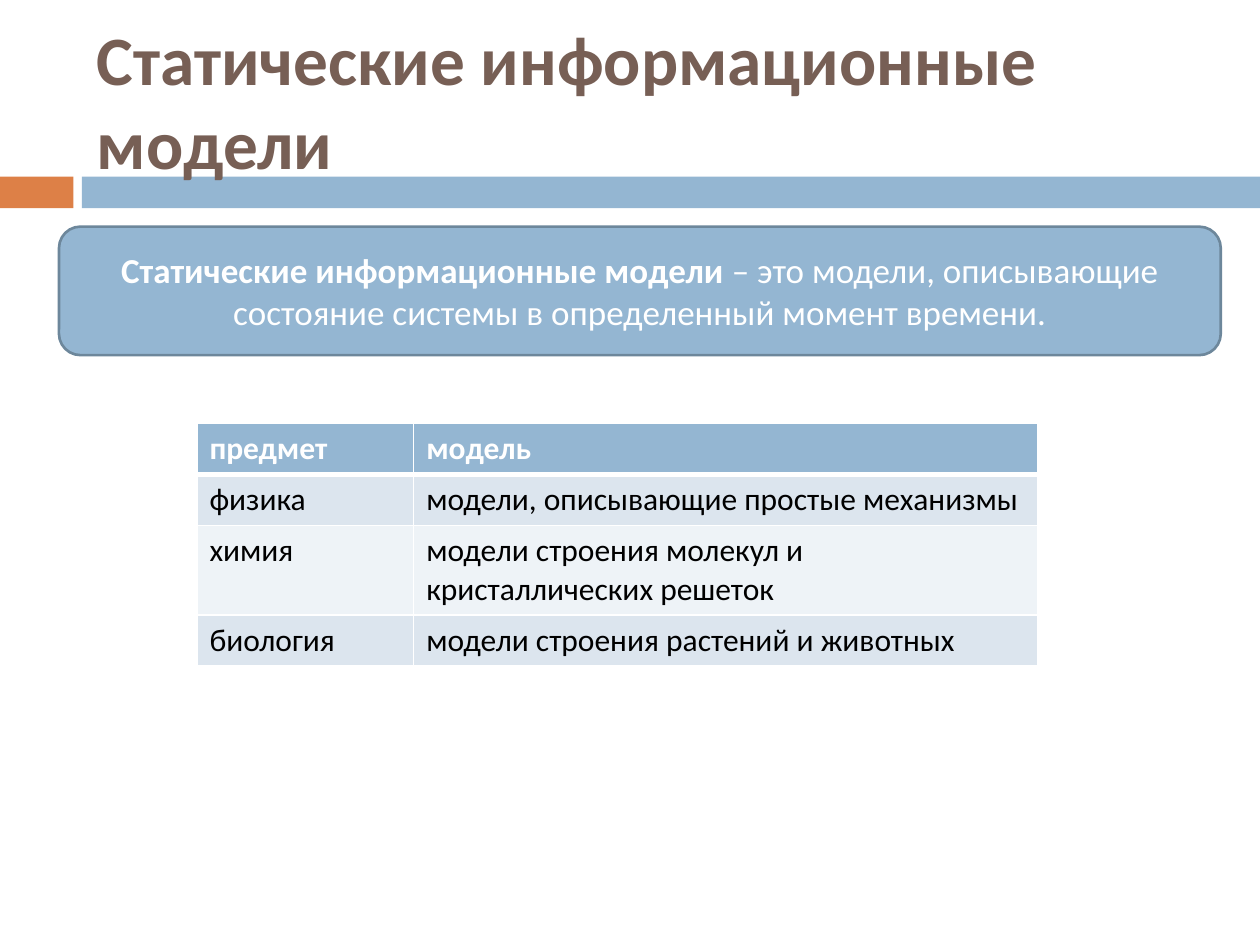
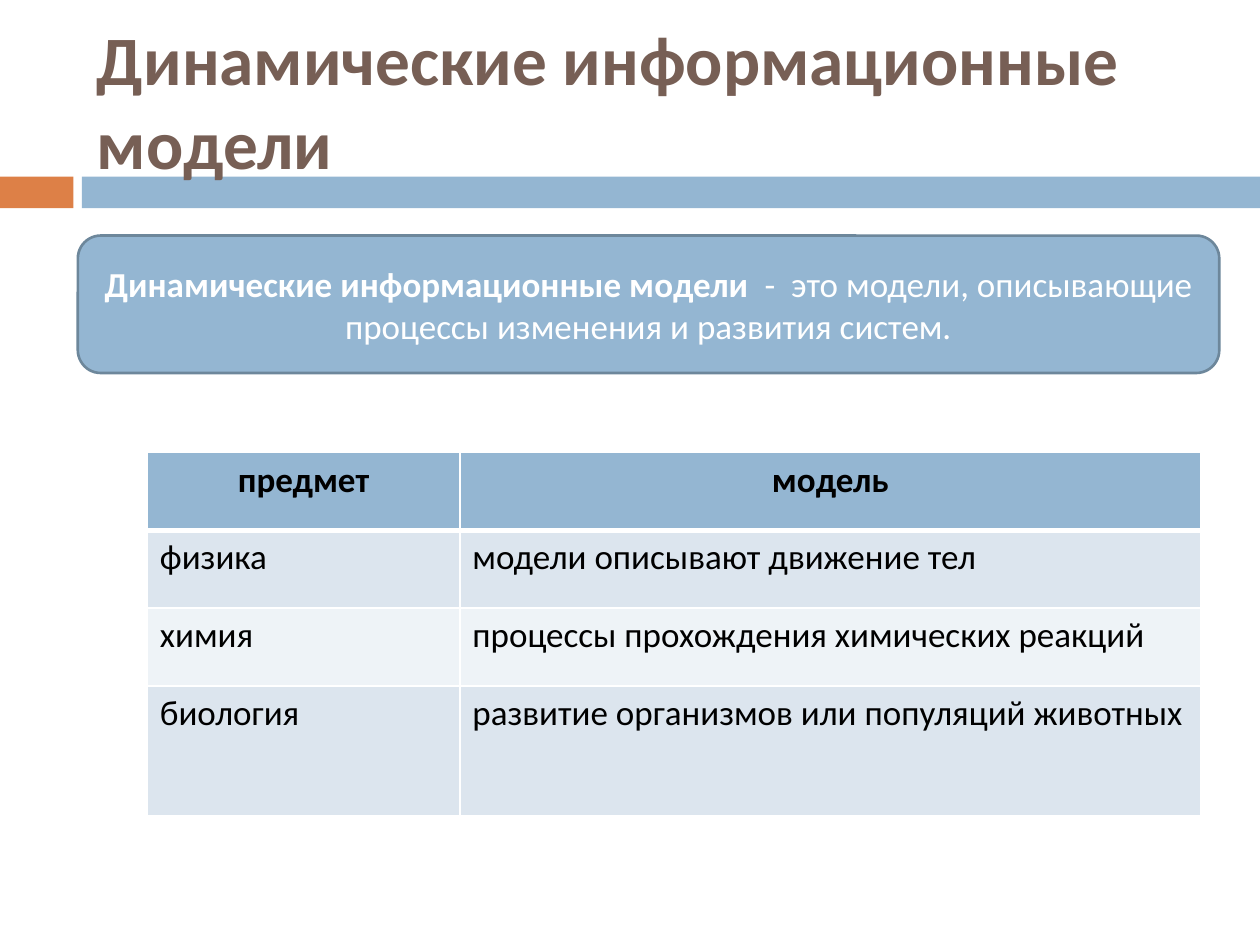
"""Two slides that define static and dynamic information models."""
import dataclasses

import lxml.etree
import pptx
import pptx.dml.color
import pptx.enum.shapes
import pptx.enum.text
import pptx.oxml.ns
import pptx.util

Cm = pptx.util.Cm
ALIGN = pptx.enum.text.PP_ALIGN
MIDDLE = pptx.enum.text.MSO_ANCHOR.MIDDLE
SHAPE = pptx.enum.shapes.MSO_SHAPE
TITLE_ONLY = 5


@dataclasses.dataclass(frozen=True)
class Theme:
    """Fonts, type sizes and colours shared by the slides."""
    font: str = "Calibri"
    title_size: float = 39.6
    definition_size: float = 20
    title: str = "775F55"
    accent: str = "DD8047"
    main: str = "94B6D2"
    outline: str = "6D879B"
    odd_row: str = "DCE5EE"
    even_row: str = "EEF3F7"
    light: str = "FFFFFF"
    dark: str = "000000"


THEME = Theme()


def rgb(colour):
    """Turn a hex string into a colour."""
    return pptx.dml.color.RGBColor.from_string(colour)


def add_run(paragraph, text, size, colour, bold=False):
    """Append one formatted run."""
    run = paragraph.add_run()
    run.text = text
    run.font.name = THEME.font
    run.font.size = pptx.util.Pt(size)
    run.font.bold = bold
    run.font.color.rgb = rgb(colour)


def add_block(slide, kind, box, fill, outline=None):
    """Add a flat filled shape, outlined on request."""
    block = slide.shapes.add_shape(kind, *map(Cm, box))
    block.shadow.inherit = False
    block.fill.solid()
    block.fill.fore_color.rgb = rgb(fill)
    if outline:
        block.line.color.rgb = rgb(outline)
        block.line.width = pptx.util.Pt(1.5)
    else:
        block.line.fill.background()
    return block


def put_bands_on_layout(layout, slide):
    """Draw the two title bands and hand them to the shared layout."""
    top, height = 3.56, 0.64
    for left, width, colour in ((0, 1.48, THEME.accent), (1.65, 23.75, THEME.main)):
        band = add_block(slide, SHAPE.RECTANGLE, (left, top, width, height), colour)
        layout.shapes.element.insert(2, band.element)


def set_title(slide, text):
    """Place and format the slide title."""
    title = slide.shapes.title
    title.left, title.top, title.width, title.height = map(Cm, (1.7, 0.64, 22.66, 2.74))
    frame = title.text_frame
    frame.auto_size = pptx.enum.text.MSO_AUTO_SIZE.NONE
    frame.vertical_anchor = MIDDLE
    paragraph = frame.paragraphs[0]
    paragraph.alignment = ALIGN.LEFT
    add_run(paragraph, text, THEME.title_size, THEME.title, bold=True)


def add_definition(slide, box, term, meaning):
    """Add the rounded panel with a bold term and its meaning."""
    panel = add_block(slide, SHAPE.ROUNDED_RECTANGLE, box, THEME.main, THEME.outline)
    frame = panel.text_frame
    frame.word_wrap = True
    frame.vertical_anchor = MIDDLE
    paragraph = frame.paragraphs[0]
    paragraph.alignment = ALIGN.CENTER
    add_run(paragraph, term, THEME.definition_size, THEME.light, bold=True)
    add_run(paragraph, meaning, THEME.definition_size, THEME.light)


def set_borders(cell, top, bottom):
    """Draw white cell borders with the given top and bottom widths in points."""
    properties = cell._tc.get_or_add_tcPr()
    qn = pptx.oxml.ns.qn
    for side, width in (("L", 1), ("R", 1), ("T", top), ("B", bottom)):
        line = lxml.etree.SubElement(properties, qn(f"a:ln{side}"), w=str(pptx.util.Pt(width)))
        fill = lxml.etree.SubElement(line, qn("a:solidFill"))
        lxml.etree.SubElement(fill, qn("a:srgbClr"), val=THEME.light)


def add_models_table(slide, corner, widths, heights, rows, size,
                     header_colour, header_align, body_align):
    """Add a table of subjects and their models under a header row."""
    frame = slide.shapes.add_table(len(rows), len(widths), *map(Cm, corner),
                                   Cm(sum(widths)), Cm(sum(heights)))
    table = frame.table
    for column, width in zip(table.columns, widths):
        column.width = Cm(width)
    for index, (row, height, texts) in enumerate(zip(table.rows, heights, rows)):
        row.height = Cm(height)
        header = index == 0
        band = THEME.odd_row if index % 2 else THEME.even_row
        for cell, text in zip(row.cells, texts):
            set_borders(cell, top=3 if index == 1 else 1, bottom=3 if header else 1)
            cell.fill.solid()
            cell.fill.fore_color.rgb = rgb(THEME.main if header else band)
            paragraph = cell.text_frame.paragraphs[0]
            paragraph.alignment = header_align if header else body_align
            add_run(paragraph, text, size, header_colour if header else THEME.dark, header)


def main():
    """Build and save the presentation."""
    presentation = pptx.Presentation()
    presentation.slide_width, presentation.slide_height = Cm(25.4), Cm(19.05)
    layout = presentation.slide_layouts[TITLE_ONLY]
    header = ("предмет", "модель")

    static = presentation.slides.add_slide(layout)
    put_bands_on_layout(layout, static)
    set_title(static, "Статические информационные модели")
    add_definition(
        static, (1.19, 4.57, 23.42, 2.59), "Статические информационные модели ",
        "– это модели, описывающие состояние системы в определенный момент времени.")
    add_models_table(
        static, (3.97, 8.53), (4.37, 12.57), [1.03] * 4,
        (header,
         ("физика", "модели, описывающие простые механизмы"),
         ("химия", "модели строения молекул и кристаллических решеток"),
         ("биология", "модели строения растений и животных")),
        18, THEME.light, ALIGN.LEFT, ALIGN.LEFT)

    dynamic = presentation.slides.add_slide(layout)
    set_title(dynamic, "Динамические информационные модели")
    add_definition(
        dynamic, (1.57, 4.75, 23.01, 2.77), "Динамические информационные модели",
        "  -  это модели, описывающие процессы изменения и развития систем.")
    add_models_table(
        dynamic, (2.97, 9.12), (6.3, 14.94), [1.57] * 3 + [2.62],
        (header,
         ("физика", "модели описывают движение тел"),
         ("химия", "процессы прохождения химических реакций"),
         ("биология", "развитие организмов или популяций животных")),
        20, THEME.dark, ALIGN.CENTER, ALIGN.JUSTIFY)

    presentation.save("out.pptx")


if __name__ == "__main__":
    main()
